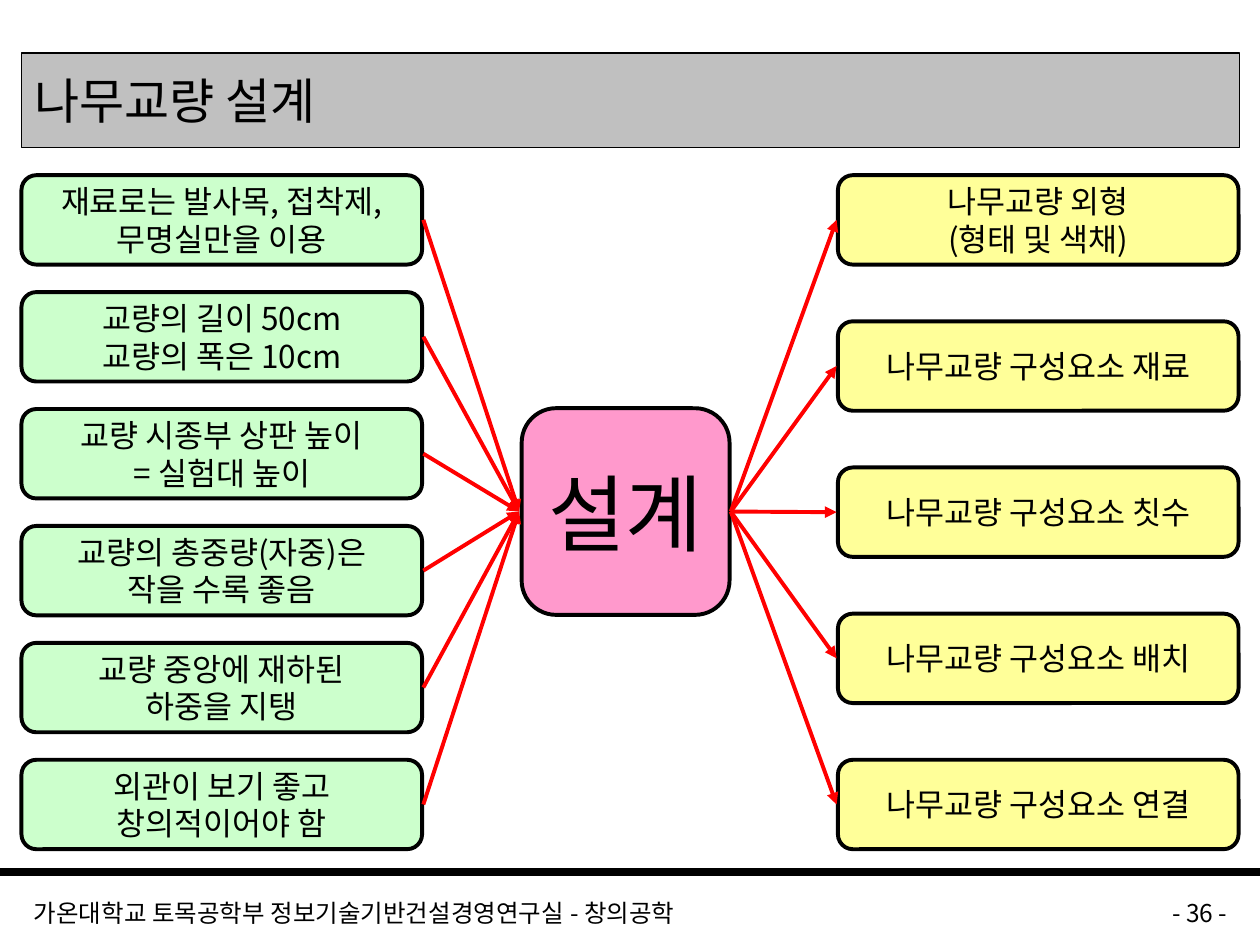
import pptx
import pptx.dml.color
import pptx.enum.shapes
import pptx.enum.text
import pptx.util
from lxml import etree
from pptx.oxml.ns import qn

Inches, Pt = pptx.util.Inches, pptx.util.Pt
ALIGN, ANCHOR = pptx.enum.text.PP_ALIGN, pptx.enum.text.MSO_ANCHOR
ROUNDED = pptx.enum.shapes.MSO_SHAPE.ROUNDED_RECTANGLE
STRAIGHT = pptx.enum.shapes.MSO_CONNECTOR.STRAIGHT
FONT = "Noto Sans CJK KR"

# Content: \n starts a paragraph, \v breaks a line
TITLE = "나무교량 설계"
GOAL = "설계"
CONDITIONS = [
    "재료로는 발사목, 접착제,\v무명실만을 이용",
    "교량의 길이 50cm\n교량의 폭은 10cm",
    "교량 시종부 상판 높이\n= 실험대 높이",
    "교량의 총중량(자중)은\n작을 수록 좋음",
    "교량 중앙에 재하된\n하중을 지탱",
    "외관이 보기 좋고\n창의적이어야 함",
]
DECISIONS = [
    "나무교량 외형\n(형태 및 색채)",
    "나무교량 구성요소 재료",
    "나무교량 구성요소 칫수",
    "나무교량 구성요소 배치",
    "나무교량 구성요소 연결",
]
FOOTER = "가온대학교 토목공학부 정보기술기반건설경영연구실 - 창의공학"
PAGE = "- 36 -"

# Layout in inches
BOX_W, BOX_H = 3.18, 0.71
FIRST_TOP, LAST_TOP = 1.39, 6.03
LEFT_X, RIGHT_X = 0.17, 6.65
GOAL_BOX = (4.14, 3.24, 1.65, 1.64)
HUB_IN, HUB_OUT = (4.12, 4.06), (5.8, 4.06)


def color(hex_value):
    return pptx.dml.color.RGBColor.from_string(hex_value)


def place(shape, box):
    for side, value in zip(("left", "top", "width", "height"), box):
        setattr(shape, side, Inches(value))


def write(shape, text, size, align=ALIGN.LEFT, anchor=ANCHOR.MIDDLE, spacing=None):
    frame = shape.text_frame
    frame.text = text
    frame_format = {"word_wrap": True, "vertical_anchor": anchor,
                    "auto_size": pptx.enum.text.MSO_AUTO_SIZE.NONE}
    for name, value in frame_format.items():
        setattr(frame, name, value)
    for paragraph in frame.paragraphs:
        paragraph.alignment = align
        if spacing:
            paragraph.line_spacing = Pt(spacing)
        for run in paragraph.runs:
            for name, value in {"name": FONT, "size": Pt(size)}.items():
                setattr(run.font, name, value)
            run.font.color.rgb = color("000000")
            # Hangul takes the East Asian typeface
            east_asian = etree.SubElement(run.font._element, qn("a:ea"))
            east_asian.set("typeface", FONT)


def paint(shape, fill, line_width):
    shape.fill.solid()
    shape.fill.fore_color.rgb = color(fill)
    shape.line.color.rgb = color("000000")
    shape.line.width = Pt(line_width)


def add_box(slide, box, text, fill, size, spacing=None):
    shape = slide.shapes.add_shape(ROUNDED, *map(Inches, box))
    shape.shadow.inherit = False
    shape.adjustments[0] = 0.167
    paint(shape, fill, 2.25)
    write(shape, text, size, ALIGN.CENTER, spacing=spacing)


def add_line(slide, start, end, hex_value, width, arrow=False):
    line = slide.shapes.add_connector(STRAIGHT, *map(Inches, start + end))
    line.line.color.rgb = color(hex_value)
    line.line.width = Pt(width)
    if arrow:
        head = etree.SubElement(line.line._get_or_add_ln(), qn("a:tailEnd"))
        head.set("type", "triangle")
    etree.SubElement(line._element.spPr, qn("a:effectLst"))


def add_column(slide, x, texts, fill):
    """Stack the boxes at equal steps and return their middle heights."""
    step = (LAST_TOP - FIRST_TOP) / (len(texts) - 1)
    tops = [FIRST_TOP + i * step for i in range(len(texts))]
    for top, text in zip(tops, texts):
        add_box(slide, (x, top, BOX_W, BOX_H), text, fill, 18, spacing=21.5)
    return [top + BOX_H / 2 for top in tops]


def main():
    deck = pptx.Presentation()
    deck.slide_width, deck.slide_height = Inches(10), Inches(7.5)
    slide = deck.slides.add_slide(deck.slide_layouts[5])

    # Footer
    add_line(slide, (0, 6.92), (10, 6.92), "000000", 4.5)
    for box, text, align in [((0.17, 7.08, 7.83, 0.25), FOOTER, ALIGN.LEFT),
                             ((8.17, 7.08, 1.67, 0.25), PAGE, ALIGN.RIGHT)]:
        note = slide.shapes.add_textbox(*map(Inches, box))
        write(note, text, 14, align, ANCHOR.TOP)

    # Title bar
    title = slide.shapes.title
    place(title, (0.17, 0.42, 9.67, 0.75))
    paint(title, "C0C0C0", 0.75)
    write(title, TITLE, 28)

    # Conditions, goal and decisions
    condition_mids = add_column(slide, LEFT_X, CONDITIONS, "CCFFCC")
    add_box(slide, GOAL_BOX, GOAL, "FF99CC", 48)
    decision_mids = add_column(slide, RIGHT_X, DECISIONS, "FFFF99")

    # Arrows into and out of the goal
    for mid in condition_mids:
        add_line(slide, (LEFT_X + BOX_W + 0.01, mid), HUB_IN, "FF0000", 2.25, arrow=True)
    for mid in decision_mids:
        add_line(slide, HUB_OUT, (RIGHT_X - 0.01, mid), "FF0000", 2.25, arrow=True)

    deck.save("out.pptx")


if __name__ == "__main__":
    main()
